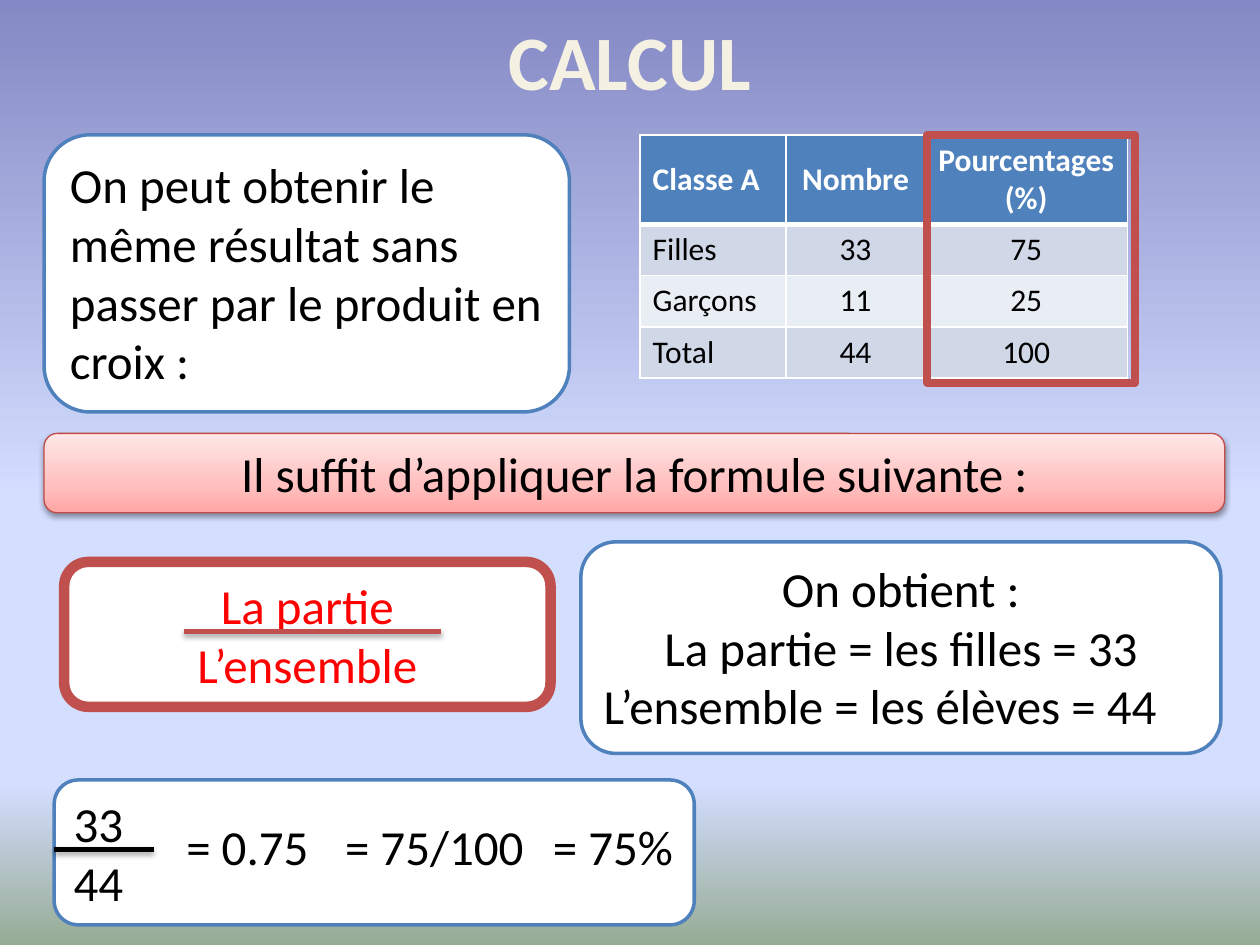
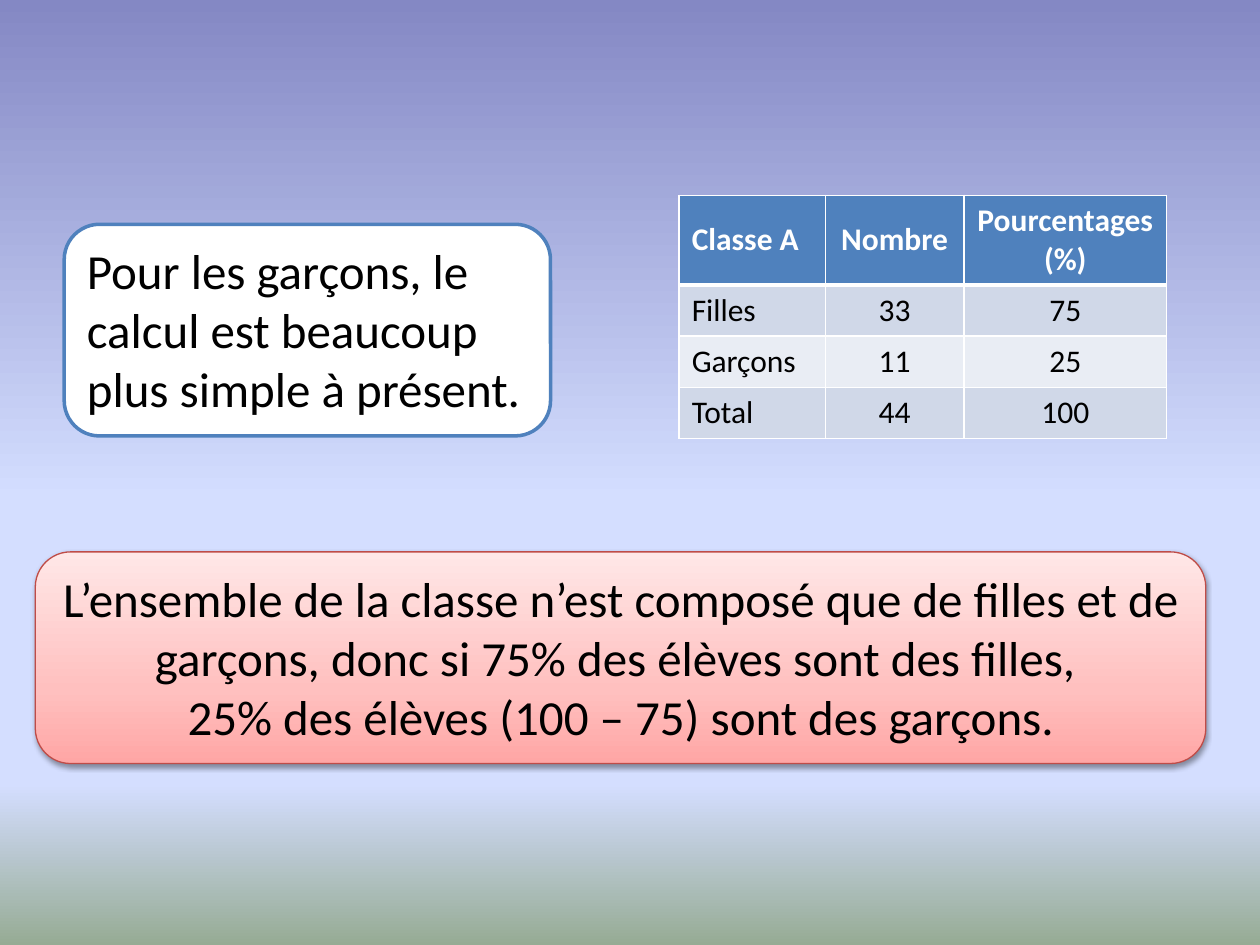
from dataclasses import dataclass

from lxml import etree
from pptx import Presentation
from pptx.dml.color import RGBColor
from pptx.enum.shapes import MSO_CONNECTOR, MSO_SHAPE
from pptx.enum.text import MSO_ANCHOR, PP_ALIGN
from pptx.oxml.ns import qn
from pptx.util import Emu, Inches, Pt

LEFT, CENTER = PP_ALIGN.LEFT, PP_ALIGN.CENTER
TOP, MIDDLE = MSO_ANCHOR.TOP, MSO_ANCHOR.MIDDLE
ROUNDED, RECTANGLE = MSO_SHAPE.ROUNDED_RECTANGLE, MSO_SHAPE.RECTANGLE
STRAIGHT = MSO_CONNECTOR.STRAIGHT
TITLE_ONLY, BLANK = 5, 6


@dataclass(frozen=True)
class Theme:
    font: str = "Calibri"
    title_size: float = 44
    body_size: float = 28
    table_size: float = 18
    title: str = "F4F1E3"
    text: str = "000000"
    white: str = "FFFFFF"
    formula: str = "FF0000"
    blue: str = "4F81BD"
    red: str = "C0504D"
    banner_line: str = "BF4C48"
    bands: tuple = ("D0D8E8", "E9EDF4")
    sky: tuple = ((0, "8488C4"), (53, "D4DEFF"), (83, "D4DEFF"), (100, "96AB94"))
    blush: tuple = ((0, "FFA6A5"), (35, "FFC0BF"), (100, "FFE7E7"))


THEME = Theme()

# The slide is a grid of 100 columns by 75 rows of square cells
COLUMNS, ROWS = 100, 75
CELL = Inches(0.1)

CLASS_TABLE = (
    ("Classe A", "Nombre", "Pourcentages\n(%)"),
    ("Filles", "33", "75"),
    ("Garçons", "11", "25"),
    ("Total", "44", "100"),
)
TABLE_COLUMNS = (11.6, 11, 16.1)
TABLE_ROWS = (7, 4.07, 4.07, 4.07)


def grid(*cells):
    return [Emu(round(cell * CELL)) for cell in cells]


def color(value):
    return RGBColor.from_string(value)


def add_element(parent, tag, **attributes):
    element = etree.SubElement(parent, qn(tag))
    for name, value in attributes.items():
        element.set(name, str(value))
    return element


def paint_gradient(fill, owner, stops, angle):
    """Fill with any number of colour stops; the angle runs counter-clockwise."""
    fill.gradient()
    fill.gradient_angle = angle
    stop_list = next(owner.iter(qn("a:gsLst")))
    for stop in list(stop_list):
        stop_list.remove(stop)
    for position, value in stops:
        stop = add_element(stop_list, "a:gs", pos=position * 1000)
        add_element(stop, "a:srgbClr", val=value)


def add_shadow(properties, opacity, distance):
    """Cast a soft shadow straight down."""
    effects = properties.find(qn("a:effectLst"))
    if effects is None:
        effects = add_element(properties, "a:effectLst")
    shadow = add_element(effects, "a:outerShdw", blurRad=Pt(3.1), dist=Pt(distance),
                         dir=5400000, rotWithShape=0)
    black = add_element(shadow, "a:srgbClr", val="000000")
    add_element(black, "a:alpha", val=opacity * 1000)


def write_text(frame, text, size=THEME.body_size, ink=THEME.text, bold=False,
               align=LEFT, anchor=TOP):
    """Write one paragraph per line; align is one value or one per paragraph."""
    frame.word_wrap = True
    frame.vertical_anchor = anchor
    frame.text = text
    paragraphs = frame.paragraphs
    aligns = align if isinstance(align, tuple) else (align,) * len(paragraphs)
    font_format = {"name": THEME.font, "size": Pt(size), "bold": bold}
    for paragraph, alignment in zip(paragraphs, aligns):
        paragraph.alignment = alignment
        for run in paragraph.runs:
            for name, value in font_format.items():
                setattr(run.font, name, value)
            run.font.color.rgb = color(ink)


def style_line(line, value, width):
    line.color.rgb = color(value)
    line.width = Pt(width)


def add_card(slide, place, text, line=THEME.blue, width=2, **text_format):
    """White rounded card with a coloured outline."""
    card = slide.shapes.add_shape(ROUNDED, *grid(*place))
    card.shadow.inherit = False
    card.fill.solid()
    card.fill.fore_color.rgb = color(THEME.white)
    style_line(card.line, line, width)
    write_text(card.text_frame, text, **text_format)


def add_banner(slide, place, text):
    """Pink gradient banner with a shadow."""
    banner = slide.shapes.add_shape(ROUNDED, *grid(*place))
    banner.shadow.inherit = False
    paint_gradient(banner.fill, banner.element, THEME.blush, 90)
    style_line(banner.line, THEME.banner_line, 0.75)
    add_shadow(banner.element.spPr, 38, 1.6)
    write_text(banner.text_frame, text, align=CENTER)


def add_frame(slide, place):
    """Empty red frame that highlights a table column."""
    frame = slide.shapes.add_shape(RECTANGLE, *grid(*place))
    frame.shadow.inherit = False
    frame.fill.background()
    style_line(frame.line, THEME.red, 4.5)


def add_fraction_bar(slide, left, right, row, value):
    bar = slide.shapes.add_connector(STRAIGHT, *grid(left, row, right, row))
    style_line(bar.line, value, 3)
    add_shadow(bar.element.spPr, 35, 1.8)


def add_label(slide, place, text):
    label = slide.shapes.add_textbox(*grid(*place))
    write_text(label.text_frame, text)


def add_title(slide, text):
    title = slide.shapes.title
    place = grid(5, 0, COLUMNS - 10, 9.4)
    for name, value in zip(("left", "top", "width", "height"), place):
        setattr(title, name, value)
    write_text(title.text_frame, text, THEME.title_size, THEME.title, True,
               CENTER, MIDDLE)


def set_borders(cell, top, bottom):
    """White borders, which come before the fill in the cell properties."""
    properties = cell._tc.get_or_add_tcPr()
    widths = {"a:lnL": 1, "a:lnR": 1, "a:lnT": top, "a:lnB": bottom}
    for index, (tag, width) in enumerate(widths.items()):
        border = add_element(properties, tag, w=Pt(width))
        fill = add_element(border, "a:solidFill")
        add_element(fill, "a:srgbClr", val=THEME.white)
        properties.insert(index, border)


def add_class_table(slide, left, top):
    place = grid(left, top, sum(TABLE_COLUMNS), sum(TABLE_ROWS))
    table = slide.shapes.add_table(len(TABLE_ROWS), len(TABLE_COLUMNS), *place).table
    for column, width in zip(table.columns, grid(*TABLE_COLUMNS)):
        column.width = width
    for row, height in zip(table.rows, grid(*TABLE_ROWS)):
        row.height = height
    for row_index, values in enumerate(CLASS_TABLE):
        header = row_index == 0
        background = THEME.blue if header else THEME.bands[(row_index - 1) % 2]
        for column_index, value in enumerate(values):
            cell = table.cell(row_index, column_index)
            cell.fill.solid()
            cell.fill.fore_color.rgb = color(background)
            set_borders(cell, 3 if row_index == 1 else 1, 3 if header else 1)
            write_text(cell.text_frame, value, THEME.table_size,
                       THEME.white if header else THEME.text, header,
                       CENTER if column_index else LEFT)
            cell.vertical_anchor = MIDDLE if header else TOP


def build_formula_slide(presentation):
    slide = presentation.slides.add_slide(presentation.slide_layouts[TITLE_ONLY])
    add_title(slide, "CALCUL")

    # Introduction and class table
    add_class_table(slide, 50.8, 10.7)
    add_card(slide, (3.5, 10.7, 41.7, 22),
             "On peut obtenir le même résultat sans passer par le produit en croix :")
    add_frame(slide, (73.6, 10.7, 16.5, 19.7))
    add_banner(slide, (3.5, 34.4, 93.7, 6.3),
               "Il suffit d’appliquer la formule suivante :")

    # Formula and its terms
    add_card(slide, (46.1, 43, 50.8, 16.8),
             "On obtient :\nLa partie = les filles = 33\nL’ensemble = les élèves = 44",
             align=(CENTER, CENTER, LEFT))
    add_card(slide, (5.1, 44.6, 38.6, 11.5), "La partie\nL’ensemble",
             line=THEME.red, width=6, ink=THEME.formula, align=CENTER)
    add_fraction_bar(slide, 14.6, 35, 50.1, THEME.red)

    # Worked result
    add_card(slide, (4.3, 61.9, 50.8, 11.5), "33\n44")
    add_fraction_bar(slide, 4.3, 12.2, 67.4, THEME.text)
    for left, width, step in ((13.8, 11.8, "= 0.75"), (26.4, 18.1, "= 75/100"),
                              (42.9, 11.8, "= 75%")):
        add_label(slide, (left, 64.3, width, 5.7), step)


def build_conclusion_slide(presentation):
    slide = presentation.slides.add_slide(presentation.slide_layouts[BLANK])
    add_class_table(slide, 53.9, 15.5)
    add_card(slide, (5.1, 17.8, 38.6, 16.8),
             "Pour les garçons, le calcul est beaucoup plus simple à présent.")
    add_banner(slide, (2.8, 43.8, 92.9, 16.8),
               "L’ensemble de la classe n’est composé que de filles et de garçons, "
               "donc si 75% des élèves sont des filles, \n"
               "25% des élèves (100 – 75) sont des garçons.")


def main():
    presentation = Presentation()
    presentation.slide_width, presentation.slide_height = grid(COLUMNS, ROWS)
    master = presentation.slide_master
    paint_gradient(master.background.fill, master.element, THEME.sky, 270)
    build_formula_slide(presentation)
    build_conclusion_slide(presentation)
    presentation.save("out.pptx")


if __name__ == "__main__":
    main()
